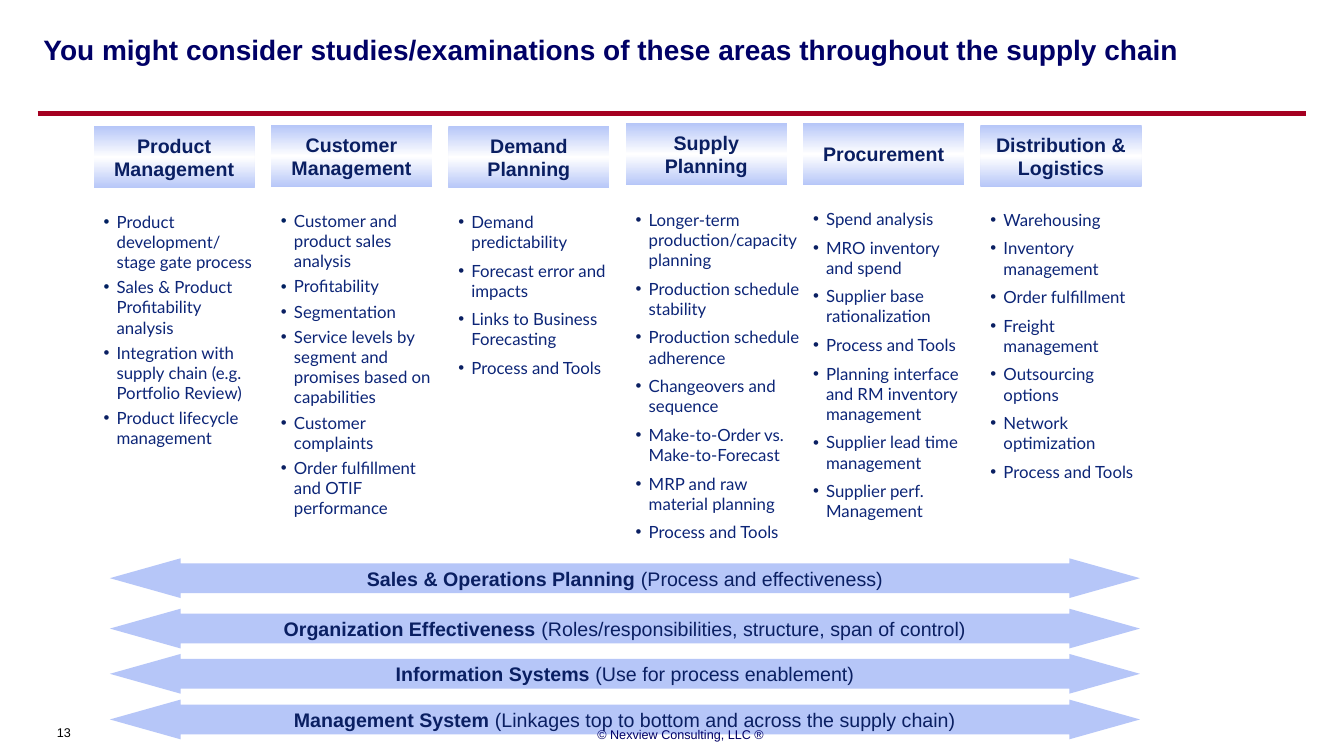
import copy
from dataclasses import dataclass

import lxml.etree
import pptx
import pptx.dml.color
import pptx.enum.shapes
import pptx.enum.text
import pptx.oxml.ns
import pptx.util

Cm = pptx.util.Cm
Pt = pptx.util.Pt
qn = pptx.oxml.ns.qn
Kind = pptx.enum.shapes.MSO_SHAPE
Align = pptx.enum.text.PP_ALIGN
Anchor = pptx.enum.text.MSO_ANCHOR

INK = "0A1F62"
NAVY = "000066"
PALE = "B6C6F8"
LEFT, PITCH, WIDTH = 2.36, 4.47, 4.06


@dataclass
class Area:
    head: list[str]
    items: list[str]
    top: float
    start: float
    width: float = WIDTH
    gap: float = 6
    dark: int = 0


@dataclass
class Band:
    name: str
    note: str
    top: float


AREAS = [
    Area(["Product", "Management"],
         ["Product development/ stage gate process",
          "Sales & Product Profitability analysis",
          "Integration with supply chain (e.g. Portfolio Review)",
          "Product lifecycle management"], 3.18, 5.23, gap=3.6, dark=2),
    Area(["Customer", "Management"],
         ["Customer and product sales analysis", "Profitability", "Segmentation",
          "Service levels by segment and promises based on capabilities",
          "Customer complaints", "Order fulfillment and OTIF performance"],
         3.15, 5.21, gap=3.6, dark=2),
    Area(["Demand", "Planning"],
         ["Demand predictability", "Forecast error and impacts",
          "Links to Business Forecasting", "Process and Tools"], 3.18, 5.23),
    Area(["Supply", "Planning"],
         ["Longer-term production/capacity planning",
          "Production schedule stability", "Production schedule adherence",
          "Changeovers and sequence", "Make-to-Order vs. Make-to-Forecast",
          "MRP and raw material planning", "Process and Tools"],
         3.1, 5.18, width=4.5),
    Area(["Procurement"],
         ["Spend analysis", "MRO inventory and spend",
          "Supplier base rationalization", "Process and Tools",
          "Planning interface and RM inventory management",
          "Supplier lead time management", "Supplier perf. Management"],
         3.1, 5.16),
    Area(["Distribution &", "Logistics"],
         ["Warehousing", "Inventory management", "Order fulfillment",
          "Freight management", "Outsourcing options", "Network optimization",
          "Process and Tools"], 3.15, 5.18),
]

BANDS = [
    Band("Sales & Operations Planning ", "(Process and effectiveness)", 14.07),
    Band("Organization Effectiveness ",
         "(Roles/responsibilities, structure, span of control)", 15.34),
    Band("Information Systems ", "(Use for process enablement)", 16.48),
    Band("Management System ",
         "(Linkages top to bottom and across the supply chain)", 17.63),
]


def shade(color, tone: str) -> None:
    color.rgb = pptx.dml.color.RGBColor.from_string(tone)


def write(para, text: str, size: float, tone: str, bold: bool = False,
          face: str = "Arial") -> None:
    run = para.add_run()
    run.text = text
    run.font.size = Pt(size)
    run.font.name = face
    run.font.bold = bold
    shade(run.font.color, tone)


def line(frame, index: int):
    return frame.add_paragraph() if index else frame.paragraphs[0]


def inset(frame, left: float, right: float, edge: float) -> None:
    frame.margin_left, frame.margin_right = Cm(left), Cm(right)
    frame.margin_top = frame.margin_bottom = Cm(edge)


def form(slide, kind, x: float, y: float, w: float, h: float):
    shape = slide.shapes.add_shape(kind, Cm(x), Cm(y), Cm(w), Cm(h))
    shape.shadow.inherit = False
    shape.line.fill.background()
    shape.text_frame.vertical_anchor = Anchor.MIDDLE
    return shape


def box(slide, x: float, y: float, w: float, h: float):
    frame = slide.shapes.add_textbox(Cm(x), Cm(y), Cm(w), Cm(h)).text_frame
    frame.word_wrap = True
    return frame


def fade(shape) -> None:
    shape.fill.gradient()
    shape.fill.gradient_angle = 90
    stops = shape.fill.gradient_stops
    for stop, place, tone in zip(stops, (0, 0.5), (PALE, "FFFFFF")):
        stop.position = place
        shade(stop.color, tone)
    group = shape._element.spPr.find(".//" + qn("a:gsLst"))
    last = copy.deepcopy(group[0])
    last.set("pos", "100000")
    group.append(last)


def bullet(para, tone: str) -> None:
    props = para._p.get_or_add_pPr()
    props.set("marL", str(Cm(0.33)))
    props.set("indent", str(-Cm(0.33)))
    paint = lxml.etree.SubElement(props, qn("a:buClr"))
    lxml.etree.SubElement(paint, qn("a:srgbClr")).set("val", tone)
    lxml.etree.SubElement(props, qn("a:buFont")).set("typeface", "Arial")
    lxml.etree.SubElement(props, qn("a:buChar")).set("char", "•")


def draw_area(slide, area: Area, x: float) -> None:
    head = form(slide, Kind.RECTANGLE, x, area.top, WIDTH, 1.57)
    fade(head)
    for i, text in enumerate(area.head):
        para = line(head.text_frame, i)
        para.alignment = Align.CENTER
        write(para, text, 14, INK, True)
    frame = box(slide, x, area.start, area.width, 8.81)
    inset(frame, 0.25, 0, 0.1)
    for i, text in enumerate(area.items):
        para = line(frame, i)
        bullet(para, "002060" if i < area.dark else INK)
        if i:
            para.space_before = Pt(area.gap)
        write(para, text, 12, "0C2577", face="Lato")


def draw_band(slide, band: Band) -> None:
    arrow = form(slide, Kind.LEFT_RIGHT_ARROW, 2.77, band.top, 25.96, 1)
    arrow.adjustments[0] = 0.75
    arrow.adjustments[1] = 1.78
    arrow.fill.solid()
    shade(arrow.fill.fore_color, PALE)
    frame = arrow.text_frame
    frame.word_wrap = False
    inset(frame, 0.1, 0.1, 0.1)
    para = frame.paragraphs[0]
    para.alignment = Align.CENTER
    write(para, band.name, 14, INK, True)
    write(para, band.note, 14, INK)


def draw_title(slide) -> None:
    title = slide.shapes.title
    title.left, title.top = Cm(0.84), Cm(0.51)
    title.width, title.height = Cm(31.67), Cm(1.47)
    frame = title.text_frame
    frame.auto_size = pptx.enum.text.MSO_AUTO_SIZE.NONE
    frame.vertical_anchor = Anchor.MIDDLE
    para = frame.paragraphs[0]
    para.alignment = Align.LEFT
    write(para, "You might consider studies/examinations of these areas "
          "throughout the supply chain", 20, NAVY, True)


def draw_rule(slide) -> None:
    rule = slide.shapes.add_connector(
        pptx.enum.shapes.MSO_CONNECTOR.STRAIGHT,
        Cm(0.95), Cm(2.86), Cm(32.92), Cm(2.86))
    rule.line.width = Pt(4)
    shade(rule.line.color, "A50021")
    lxml.etree.SubElement(rule._element.spPr, qn("a:effectLst"))


def main() -> None:
    deck = pptx.Presentation()
    deck.slide_width, deck.slide_height = Cm(33.87), Cm(19.05)
    slide = deck.slides.add_slide(deck.slide_layouts[5])
    draw_rule(slide)
    draw_title(slide)
    for i, area in enumerate(AREAS):
        draw_area(slide, area, LEFT + i * PITCH)
    for band in BANDS:
        draw_band(slide, band)
    page = box(slide, 0.91, 18.19, 1.4, 0.61).paragraphs[0]
    page.alignment = Align.CENTER
    page.line_spacing = 0.9
    write(page, "13", 9, "000000")
    foot = box(slide, 11.79, 18.01, 10.72, 1.02)
    foot.vertical_anchor = Anchor.MIDDLE
    foot.paragraphs[0].alignment = Align.CENTER
    write(foot.paragraphs[0], "© Nexview Consulting, LLC ®", 9, NAVY)
    deck.save("out.pptx")


if __name__ == "__main__":
    main()
